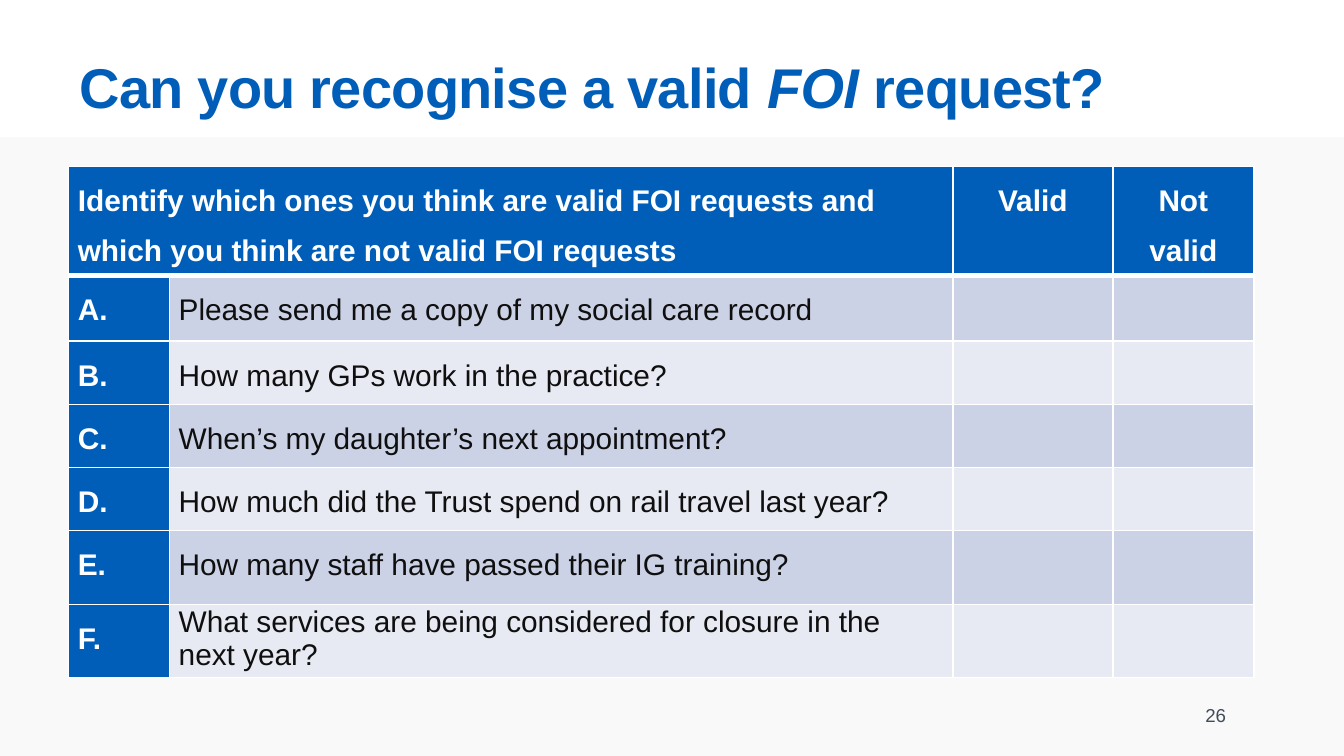
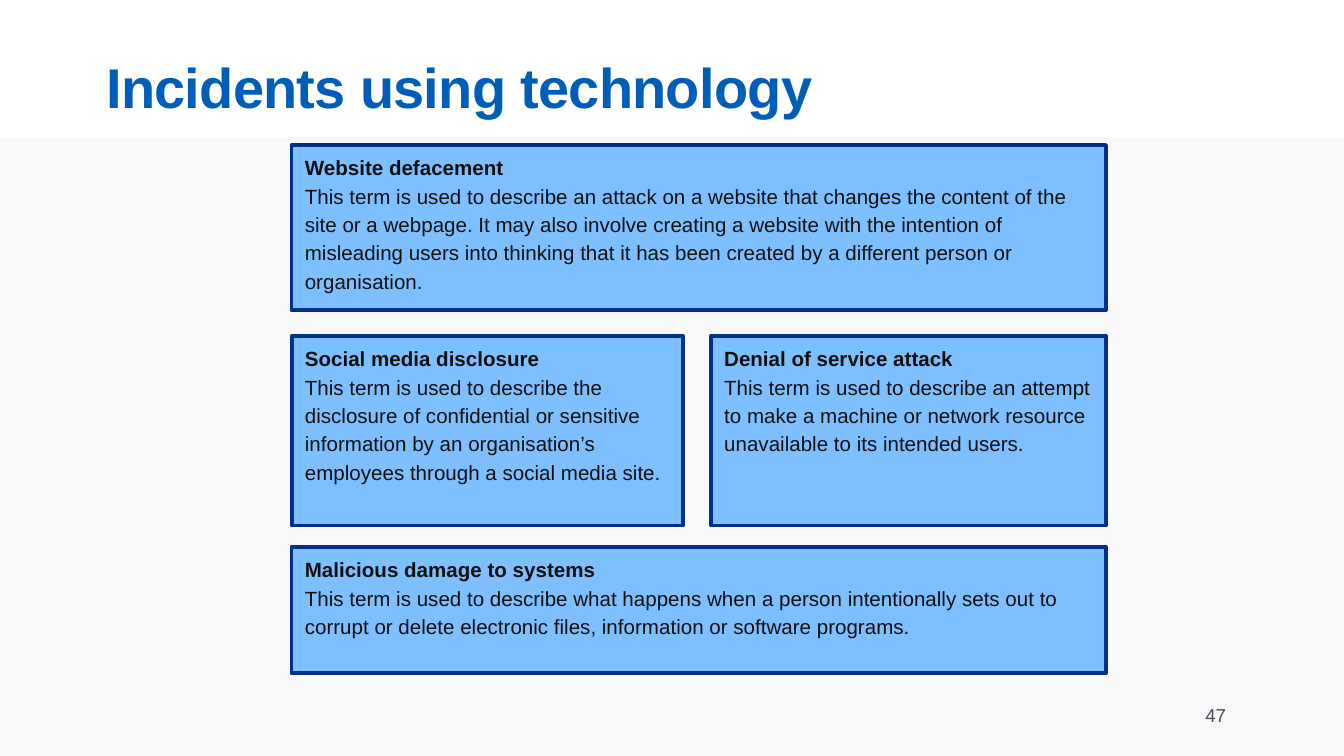
from lxml.etree import SubElement
from pptx import Presentation
from pptx.dml.color import RGBColor as Rgb
from pptx.enum.shapes import MSO_SHAPE as Shape
from pptx.enum.text import MSO_ANCHOR as Anchor, MSO_AUTO_SIZE as Fit, PP_ALIGN as Align
from pptx.oxml.ns import qn
from pptx.util import Inches, Pt

HUES = {
    "blue": "005EB8", "navy": "003087", "sky": "7DBFFF", "white": "FFFFFF",
    "ink": "0F0F0F", "slate": "424D58", "band": "F9F9F9",
    "odd": "CCD2E6", "even": "E7EAF3",
}
WIDE = 10
HIGH = WIDE * 9 / 16
HEAD = ("Identify which ones you think are valid FOI requests "
        "and which you think are not valid FOI requests")
ASKS = [
    "Please send me a copy of my social care record",
    "How many GPs work in the practice?",
    "When’s my daughter’s next appointment?",
    "How much did the Trust spend on rail travel last year?",
    "How many staff have passed their IG training?",
    "What services are being considered for closure in the next year?",
]
COLS = [0.75, 5.83, 1.19, 1.05]
ROWS = [0.33, 0.49, 0.47, 0.47, 0.47, 0.55, 0.33]
TERMS = [
    (1.23, [(6.06, "Website defacement",
             "This term is used to describe an attack on a website that changes the "
             "content of the site or a webpage. It may also involve creating a website "
             "with the intention of misleading users into thinking that it has been "
             "created by a different person or organisation.")]),
    (1.41, [(2.91, "Social media disclosure",
             "This term is used to describe the disclosure of confidential or sensitive "
             "information by an organisation’s employees through a social media site."),
            (2.94, "Denial of service attack",
             "This term is used to describe an attempt to make a machine or network "
             "resource unavailable to its intended users.")]),
    (0.94, [(6.06, "Malicious damage to systems",
             "This term is used to describe what happens when a person intentionally "
             "sets out to corrupt or delete electronic files, information or software "
             "programs.")]),
]


def put(item, **vals):
    """Set each named value on an item."""
    for name, val in vals.items():
        setattr(item, name, val)


def hue(name):
    """Return a named colour."""
    return Rgb.from_string(HUES[name])


def paint(item, name):
    """Give an item a solid fill."""
    item.fill.solid()
    item.fill.fore_color.rgb = hue(name)


def place(item, box):
    """Move an item to a box in inches."""
    put(item, **dict(zip(("left", "top", "width", "height"), map(Inches, box))))


def write(para, text, size, tint, **face):
    """Add a run of styled text."""
    run = para.add_run()
    run.text = text
    put(run.font, name="Arial", size=Pt(size), **face)
    run.font.color.rgb = hue(tint)
    return run


def block(slide, box, fill):
    """Add a plain filled rectangle."""
    rect = slide.shapes.add_shape(Shape.RECTANGLE, *map(Inches, box))
    rect.shadow.inherit = False
    paint(rect, fill)
    rect.line.fill.background()
    return rect


def base(deck, parts, left, page):
    """Add a slide with band, title and page number."""
    slide = deck.slides.add_slide(deck.slide_layouts[5])
    band = block(slide, (0, 1.02, WIDE, HIGH - 1.02), "band")
    slide.shapes._spTree.insert(2, band._element)
    title = slide.shapes.title
    place(title, (left, 0.39, 9.13 - left, 0.58))
    put(title.text_frame, margin_left=0, margin_top=0, margin_right=0, margin_bottom=0,
        word_wrap=True, auto_size=Fit.NONE, vertical_anchor=Anchor.TOP)
    para = title.text_frame.paragraphs[0]
    para.alignment = Align.LEFT
    for text, slant in parts:
        run = write(para, text, 30, "blue", bold=True, italic=slant)
        run._r.get_or_add_rPr().set("spc", "-40")
    foot = slide.shapes.add_textbox(*map(Inches, (6.89, 5.17, 2.33, 0.3)))
    put(foot.text_frame, word_wrap=True, vertical_anchor=Anchor.MIDDLE)
    para = foot.text_frame.paragraphs[0]
    para.alignment = Align.RIGHT
    write(para, str(page), 10, "slate")
    return slide


def edge(cell, top, low):
    """Draw white borders round a cell."""
    props = cell._tc.get_or_add_tcPr()
    sides = {"a:lnL": 1, "a:lnR": 1, "a:lnT": top, "a:lnB": low}
    for spot, (tag, wide) in enumerate(sides.items()):
        line = SubElement(props, qn(tag), w=str(Pt(wide)))
        fill = SubElement(line, qn("a:solidFill"))
        SubElement(fill, qn("a:srgbClr"), val=HUES["white"])
        props.insert(spot, line)


def fill(cell, text, row, dark, align, gap):
    """Write and colour one table cell."""
    paint(cell, "blue" if dark else "odd" if row % 2 else "even")
    edge(cell, 3 if row == 1 else 1, 3 if row == 0 else 1)
    if not text:
        return
    put(cell, margin_left=Inches(0.07), margin_right=Inches(0.07),
        margin_top=Inches(0.01), margin_bottom=0)
    para = cell.text_frame.paragraphs[0]
    after = 0 if row in (0, len(ASKS)) else 6
    put(para, alignment=align, line_spacing=gap, space_after=Pt(after),
        space_before=Pt(6 if row else 0))
    write(para, text, 16, "white" if dark else "ink", bold=dark)


def quiz(slide, left, top):
    """Add the table of requests."""
    data = [[HEAD, "", "Valid", "Not valid"]]
    data += [[f"{mark}.", ask, "", ""] for mark, ask in zip("ABCDEF", ASKS)]
    box = (left, top, sum(COLS), sum(ROWS))
    grid = slide.shapes.add_table(len(ROWS), len(COLS), *map(Inches, box)).table
    grid.horz_banding = False
    for col, wide in zip(grid.columns, COLS):
        col.width = Inches(wide)
    for row, high in zip(grid.rows, ROWS):
        row.height = Inches(high)
    for r, line in enumerate(data):
        for c, text in enumerate(line):
            align = Align.CENTER if c > 1 else Align.LEFT
            gap = 1.0 if text == ASKS[-1] else 1.5
            fill(grid.cell(r, c), text, r, r == 0 or c == 0, align, gap)
    grid.cell(0, 0).merge(grid.cell(0, 1))


def card(slide, box, name, text):
    """Add one framed term with its meaning."""
    rect = block(slide, box, "sky")
    rect.line.color.rgb = hue("navy")
    rect.line.width = Pt(2)
    put(rect.text_frame, word_wrap=True, vertical_anchor=Anchor.TOP)
    para = rect.text_frame.paragraphs[0]
    put(para, alignment=Align.LEFT, line_spacing=1.15)
    write(para, name, 11, "ink", bold=True)
    para.add_line_break()
    write(para, text, 11, "ink", bold=False)


def terms(slide, left, top):
    """Stack the rows of terms."""
    for (high, cards), gap in zip(TERMS, (0.19, 0.16, 0)):
        x = left
        for wide, name, text in cards:
            card(slide, (x, top, wide, high), name, text)
            x += wide + 0.21
        top += high + gap


def main():
    """Build and save the deck."""
    deck = Presentation()
    put(deck, slide_width=Inches(WIDE), slide_height=Inches(HIGH))
    parts = [("Can you recognise a valid ", False), ("FOI", True), (" request?", False)]
    quiz(base(deck, parts, 0.59, 26), 0.51, 1.24)
    terms(base(deck, [("Incidents using technology", False)], 0.79, 47), 2.17, 1.08)
    deck.save("out.pptx")


if __name__ == "__main__":
    main()
